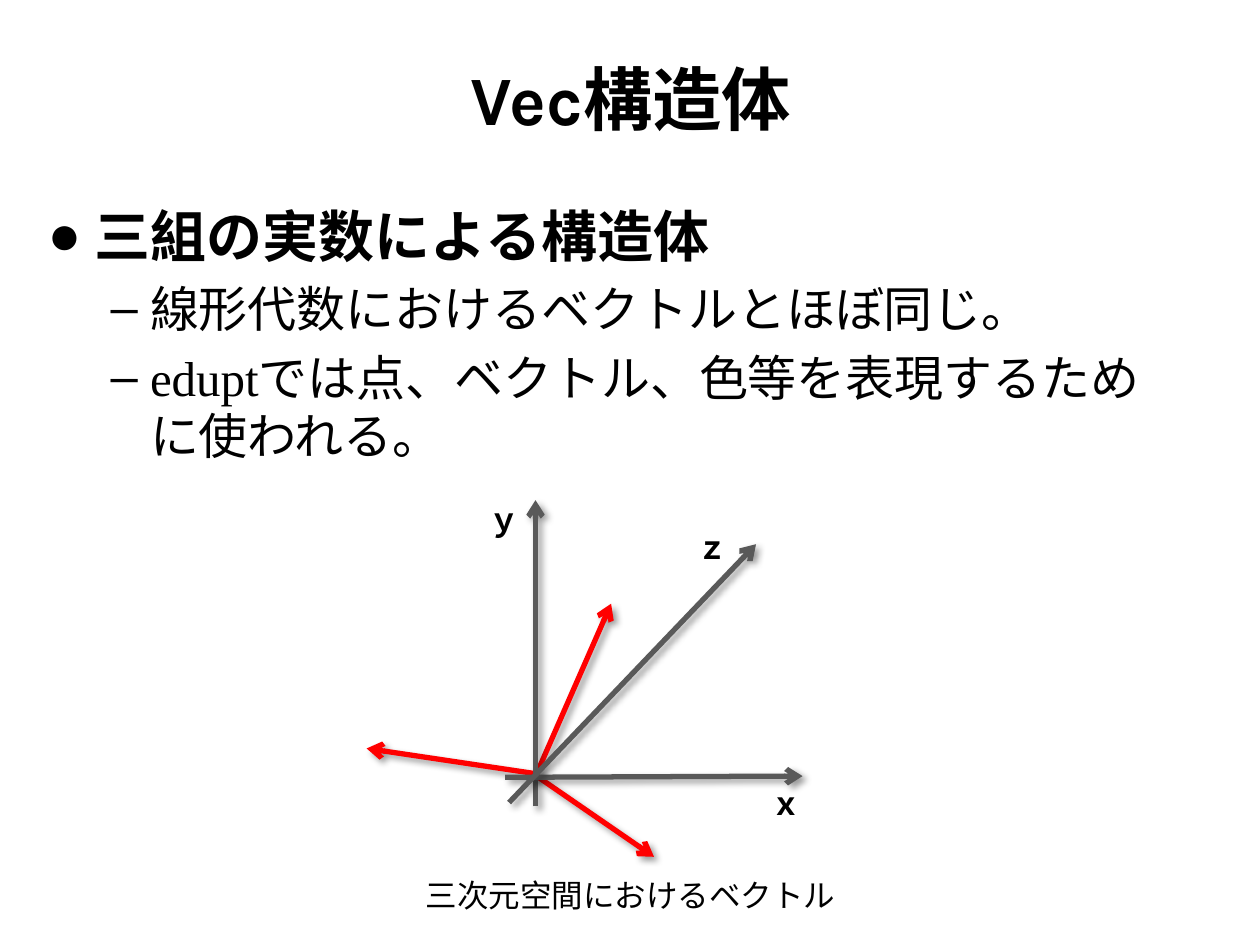
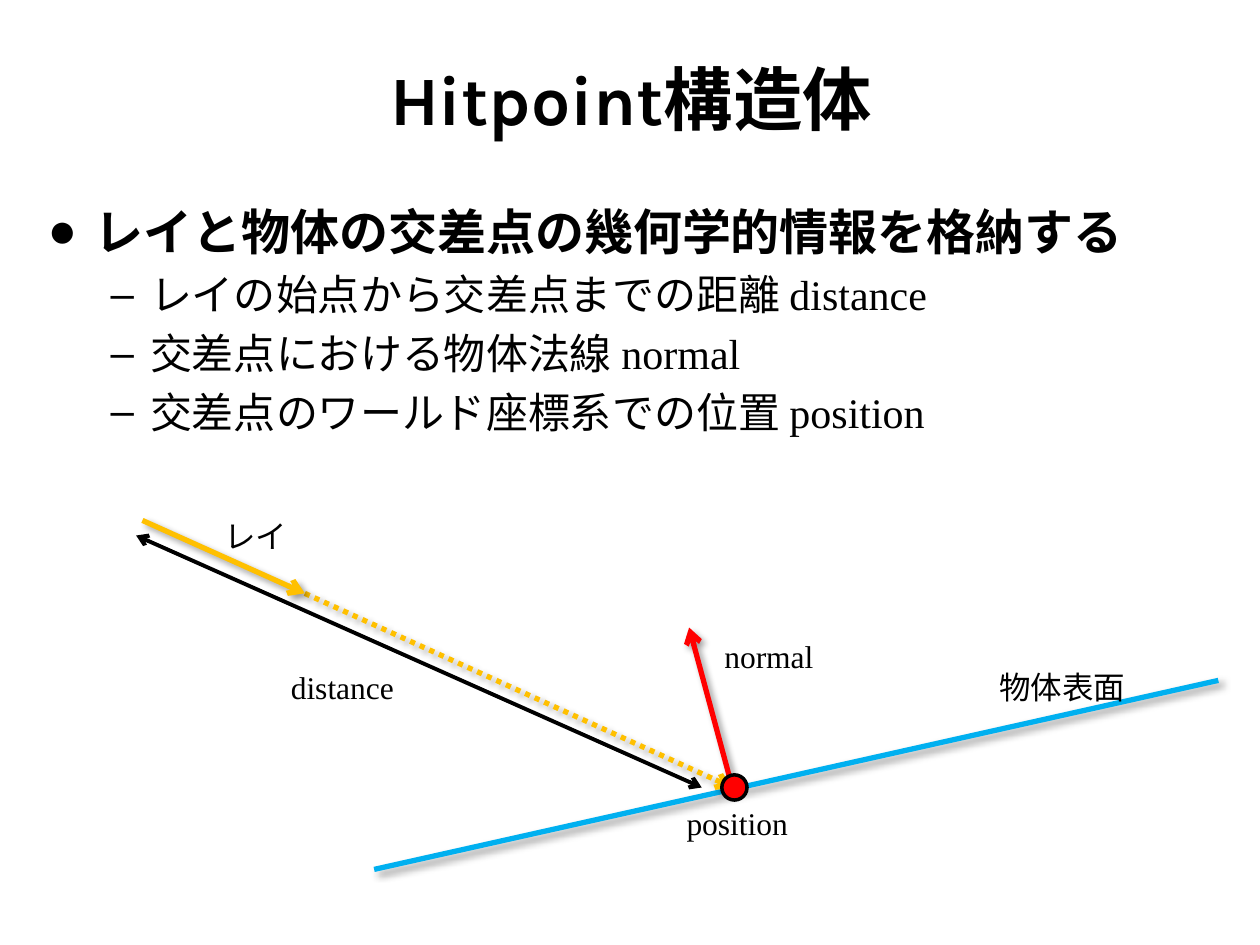
from lxml import etree
from pptx import Presentation
from pptx.dml.color import RGBColor
from pptx.enum.dml import MSO_LINE
from pptx.enum.shapes import MSO_CONNECTOR, MSO_SHAPE
from pptx.enum.text import MSO_ANCHOR, MSO_AUTO_SIZE, PP_ALIGN
from pptx.oxml import parse_xml
from pptx.oxml.ns import qn
from pptx.util import Pt

STRAIGHT = MSO_CONNECTOR.STRAIGHT
OVAL = MSO_SHAPE.OVAL
DOTS = MSO_LINE.ROUND_DOT
MIDDLE = MSO_ANCHOR.MIDDLE
FIXED = MSO_AUTO_SIZE.NONE
GROW = MSO_AUTO_SIZE.SHAPE_TO_FIT_TEXT
CENTER = PP_ALIGN.CENTER

BLACK = RGBColor(0x00, 0x00, 0x00)
RED = RGBColor(0xFF, 0x00, 0x00)
GRAY = RGBColor(0x59, 0x59, 0x59)
BLUE = RGBColor(0x00, 0xB0, 0xF0)
GOLD = RGBColor(0xFF, 0xC0, 0x00)

HEAD_FONT = "Karla"
TEXT_FONT = "Times New Roman"
SPACE = "http://schemas.openxmlformats.org/drawingml/2006/main"
SHADOW = (
    f'<a:effectLst xmlns:a="{SPACE}">'
    '<a:outerShdw blurRad="50800" dist="38100" dir="2700000" algn="tl" rotWithShape="0">'
    '<a:srgbClr val="000000"><a:alpha val="40000"/></a:srgbClr>'
    "</a:outerShdw></a:effectLst>"
)


def draw_line(slide, start, end, color, ends=("tailEnd",), width=3, dash=None, shadow=True):
    link = slide.shapes.add_connector(STRAIGHT, *map(Pt, start + end))
    link.line.color.rgb = color
    link.line.width = Pt(width)
    if dash:
        link.line.dash_style = dash
    props = link._element.spPr
    for tip in ends:
        etree.SubElement(props.find(qn("a:ln")), qn("a:" + tip), type="arrow")
    if shadow:
        props.append(parse_xml(SHADOW))
    else:
        etree.SubElement(props, qn("a:effectLst"))


def add_label(slide, text, left, top, width, bold=False):
    box = slide.shapes.add_textbox(Pt(left), Pt(top), Pt(width), Pt(29))
    frame = box.text_frame
    frame.word_wrap = False
    frame.auto_size = GROW
    frame.text = text
    font = frame.paragraphs[0].font
    font.name, font.size, font.bold = TEXT_FONT, Pt(18), bold
    font.color.rgb = BLACK


deck = Presentation()
deck.slide_width, deck.slide_height = Pt(720), Pt(540)

pages = [
    ("Vec構造体", 32, 28, [
        "三組の実数による構造体",
        "線形代数におけるベクトルとほぼ同じ。",
        "eduptでは点、ベクトル、色等を表現するために使われる。",
    ]),
    ("Hitpoint構造体", 28, 24, [
        "レイと物体の交差点の幾何学的情報を格納する",
        "レイの始点から交差点までの距離 distance",
        "交差点における物体法線 normal",
        "交差点のワールド座標系での位置 position",
    ]),
]

slides = []
for head, main, sub, items in pages:
    slide = deck.slides.add_slide(deck.slide_layouts[1])
    slides.append(slide)
    title, body = slide.placeholders
    title.left, title.top, title.width, title.height = Pt(36.5), Pt(31.5), Pt(648), Pt(49)
    frame = title.text_frame
    frame.auto_size = FIXED
    frame.vertical_anchor = MIDDLE
    frame.text = head
    line = frame.paragraphs[0]
    line.alignment = CENTER
    line.font.name, line.font.size, line.font.bold = HEAD_FONT, Pt(39.6), True
    line.font.color.rgb = BLACK

    body.left, body.top, body.width, body.height = Pt(20), Pt(111.5), Pt(664), Pt(371)
    frame = body.text_frame
    frame.auto_size = FIXED
    frame.text = "\n".join(items)
    for rank, line in enumerate(frame.paragraphs):
        first = rank == 0
        if first:
            line.space_before = Pt(0)
            etree.SubElement(line._p.get_or_add_pPr(), qn("a:buChar"), char="●")
        else:
            line.level = 1
        line.font.name = TEXT_FONT
        line.font.size = Pt(main if first else sub)
        line.font.bold = first
        line.font.color.rgb = BLACK

vec, hit = slides

for start, end, color in [
    ((306.7, 442), (349.2, 345), RED),
    ((305.3, 442), (209.5, 427.7), RED),
    ((306.7, 443.5), (373.7, 489.6), RED),
    ((306, 460.8), (306, 285.8), GRAY),
    ((288.7, 444.2), (458.6, 443.5), GRAY),
    ((290.9, 458.6), (432, 311), GRAY),
]:
    draw_line(vec, start, end, color)

for name, left, top in [("ｘ", 433.4, 444.2), ("ｙ", 272.2, 282.2), ("ｚ", 391, 298)]:
    add_label(vec, name, left, top, 32.4, True)
add_label(vec, "三次元空間におけるベクトル", 236.2, 496.8, 250.6)

source, tip, point = (81.4, 297.4), (174.2, 339.1), (418.5, 450)
draw_line(hit, (213.8, 496.8), (696.2, 388.8), BLUE, ends=())
draw_line(hit, point, (393.8, 358.6), RED)
draw_line(hit, tip, point, GOLD, dash=DOTS)
draw_line(hit, source, tip, GOLD)
draw_line(hit, (77.8, 306), (401, 450), BLACK, ("headEnd", "tailEnd"), 2.25, shadow=False)

dot = hit.shapes.add_shape(OVAL, Pt(412.5), Pt(442.8), Pt(14.4), Pt(14.4))
dot.shadow.inherit = False
dot.fill.solid()
dot.fill.fore_color.rgb = RED
dot.line.color.rgb = BLACK
dot.line.width = Pt(2)

for text, left, top, width in [
    ("position", 385.2, 455.8, 73.4),
    ("normal", 406.8, 360.7, 66.2),
    ("distance", 159.1, 378, 74.2),
    ("物体表面", 563.8, 378, 87.1),
    ("レイ", 121, 291.6, 51.1),
]:
    add_label(hit, text, left, top, width)

deck.save("out.pptx")
